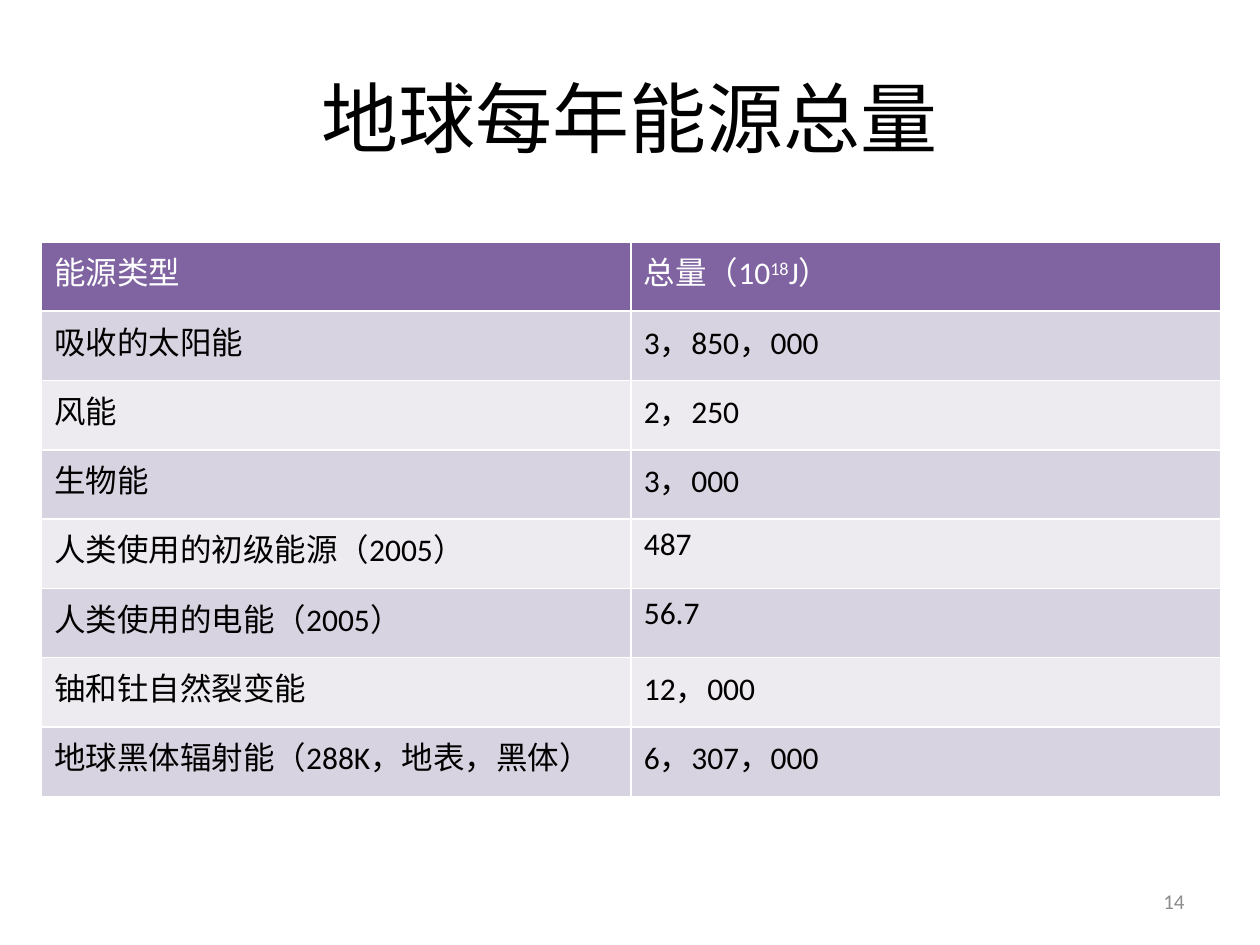
"""Build the slide on the Earth's yearly energy totals."""
import pptx
import pptx.dml.color
import pptx.enum.text
import pptx.util

RGBColor = pptx.dml.color.RGBColor
Inches = pptx.util.Inches
PP_ALIGN = pptx.enum.text.PP_ALIGN
MIDDLE = pptx.enum.text.MSO_ANCHOR.MIDDLE

BLACK = RGBColor(0x00, 0x00, 0x00)
WHITE = RGBColor(0xFF, 0xFF, 0xFF)
GREY = RGBColor(0x8C, 0x8C, 0x8C)
PURPLE = RGBColor(0x80, 0x64, 0xA2)
BANDS = RGBColor(0xED, 0xEA, 0xF0), RGBColor(0xD8, 0xD3, 0xE0)

TITLE = "地球每年能源总量"
PAGE_NUMBER = "14"
SUPERSCRIPT = "18"
ENERGY = [
    ("能源类型", ("总量（10", SUPERSCRIPT, "J）")),
    ("吸收的太阳能", "3，850，000"),
    ("风能", "2，250"),
    ("生物能", "3，000"),
    ("人类使用的初级能源（2005）", "487"),
    ("人类使用的电能（2005）", "56.7"),
    ("铀和钍自然裂变能", "12，000"),
    ("地球黑体辐射能（288K，地表，黑体）", "6，307，000"),
]
ROW_HEIGHT = 0.55


def write(frame, content, size, color, align):
    paragraph = frame.paragraphs[0]
    paragraph.alignment = align
    font = paragraph.font
    font.name, font.size, font.bold = "Calibri", pptx.util.Pt(size), False
    font.color.rgb = color
    for part in [content] if isinstance(content, str) else content:
        run = paragraph.add_run()
        run.text = part
        if part == SUPERSCRIPT:
            run.font._element.set("baseline", "30000")


def main():
    deck = pptx.Presentation()
    deck.slide_width, deck.slide_height = Inches(10), Inches(7.5)
    slide = deck.slides.add_slide(deck.slide_layouts[5])

    title = slide.shapes.title
    title.left, title.top = Inches(0.5), Inches(0.3)
    title.width, title.height = Inches(9), Inches(1.25)
    title.text_frame.vertical_anchor = MIDDLE
    write(title.text_frame, TITLE, 44, BLACK, PP_ALIGN.CENTER)

    totals = slide.shapes.add_table(
        len(ENERGY), len(ENERGY[0]), Inches(0.33), Inches(1.92),
        Inches(9.36), Inches(ROW_HEIGHT * len(ENERGY))).table
    for row, entries in enumerate(ENERGY):
        for column, entry in enumerate(entries):
            cell = totals.cell(row, column)
            cell.fill.solid()
            cell.fill.fore_color.rgb = BANDS[row % 2] if row else PURPLE
            write(cell.text_frame, entry, 18, BLACK if row else WHITE, PP_ALIGN.LEFT)

    page = slide.shapes.add_textbox(
        Inches(7.17), Inches(6.95), Inches(2.33), Inches(0.4)).text_frame
    page.word_wrap = True
    page.vertical_anchor = MIDDLE
    write(page, PAGE_NUMBER, 12, GREY, PP_ALIGN.RIGHT)

    deck.save("out.pptx")


if __name__ == "__main__":
    main()
